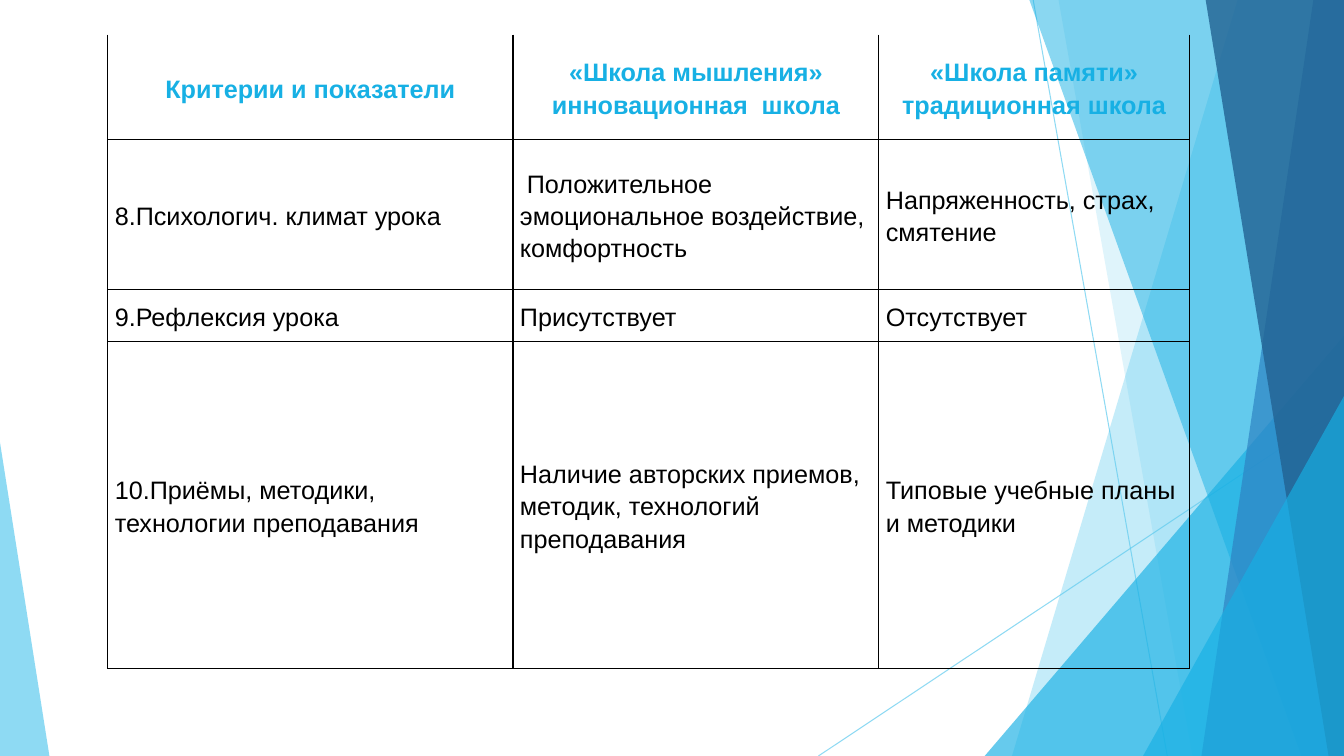
from lxml import etree
from pptx import Presentation
from pptx.dml.color import RGBColor
from pptx.enum.shapes import MSO_CONNECTOR, MSO_SHAPE
from pptx.enum.text import MSO_ANCHOR, PP_ALIGN
from pptx.oxml.ns import qn
from pptx.util import Pt

STRAIGHT = MSO_CONNECTOR.STRAIGHT
TRIANGLE = MSO_SHAPE.ISOSCELES_TRIANGLE
MIDDLE = MSO_ANCHOR.MIDDLE
LEFT, CENTER = PP_ALIGN.LEFT, PP_ALIGN.CENTER

BLACK = RGBColor(0x00, 0x00, 0x00)
SKY = RGBColor(0x5F, 0xCB, 0xEF)
CYAN = RGBColor(0x17, 0xB0, 0xE4)
BLUE = RGBColor(0x2E, 0x83, 0xC3)
NAVY = RGBColor(0x22, 0x62, 0x92)

WIDTH, HEIGHT = 960, 540
FONT = "Arial"

COLUMN_WIDTHS = [289.4, 261.4, 221.8]
ROW_HEIGHTS = [74.9, 107.3, 36.7, 234]
CRITERIA = [
    ["Критерии и показатели",
     "«Школа мышления»\nинновационная  школа",
     "«Школа памяти»\nтрадиционная школа"],
    ["8.Психологич. климат урока",
     " Положительное эмоциональное воздействие, комфортность",
     "Напряженность, страх, смятение"],
    ["9.Рефлексия урока", "Присутствует", "Отсутствует"],
    ["10.Приёмы, методики, технологии преподавания",
     "Наличие авторских приемов, методик, технологий  преподавания",
     "Типовые учебные планы и методики"],
]


def set_alpha(fill_owner, percent):
    """Make the solid fill inside a shape or line element translucent."""
    color = next(fill_owner.iter(qn("a:srgbClr")))
    etree.SubElement(color, qn("a:alpha"), val=str(percent * 1000))


def paint(shape, color, opacity):
    shape.shadow.inherit = False
    shape.fill.solid()
    shape.fill.fore_color.rgb = color
    set_alpha(shape.fill._xPr, opacity)
    shape.line.fill.background()


def add_ray(slide, x1, y1, x2, y2):
    ray = slide.shapes.add_connector(STRAIGHT, Pt(x1), Pt(y1), Pt(x2), Pt(y2))
    ray.line.color.rgb = SKY
    ray.line.width = Pt(0.75)
    properties = ray._element.spPr
    set_alpha(properties, 70)
    etree.SubElement(properties, qn("a:effectLst"))


def add_facet(slide, top_x, bottom_x, color, opacity):
    """Fill the area from a slanted edge to the right side of the slide."""
    top = -0.6
    builder = slide.shapes.build_freeform(Pt(top_x), Pt(top))
    corners = [(WIDTH, top), (WIDTH, HEIGHT), (bottom_x, HEIGHT)]
    builder.add_line_segments([(Pt(x), Pt(y)) for x, y in corners], close=True)
    paint(builder.convert_to_shape(), color, opacity)


def add_corner(slide, left, top, right, apex, color, opacity):
    """Add a triangle on the bottom edge; apex 0 is left, 1 is right."""
    corner = slide.shapes.add_shape(
        TRIANGLE, Pt(left), Pt(top), Pt(right - left), Pt(HEIGHT - top))
    corner.adjustments[0] = apex
    paint(corner, color, opacity)


def write_text(frame, text, size=18, color=BLACK, bold=False, align=LEFT):
    frame.word_wrap = True
    for index, line in enumerate(text.split("\n")):
        paragraph = frame.add_paragraph() if index else frame.paragraphs[0]
        paragraph.alignment = align
        paragraph.line_spacing = 1.15
        run = paragraph.add_run()
        run.text = line
        run.font.name = FONT
        run.font.size = Pt(size)
        run.font.bold = bold
        run.font.color.rgb = color


def set_borders(cell, hidden=()):
    properties = cell._tc.get_or_add_tcPr()
    for side in ("lnL", "lnR", "lnT", "lnB"):
        border = etree.SubElement(properties, qn(f"a:{side}"), w=str(Pt(1)))
        if side in hidden:
            etree.SubElement(border, qn("a:noFill"))
        else:
            fill = etree.SubElement(border, qn("a:solidFill"))
            etree.SubElement(fill, qn("a:srgbClr"), val=str(BLACK))


def add_criteria_table(slide):
    table = slide.shapes.add_table(
        len(ROW_HEIGHTS), len(COLUMN_WIDTHS), Pt(77), Pt(24.8),
        Pt(sum(COLUMN_WIDTHS)), Pt(sum(ROW_HEIGHTS))).table
    table.first_row = table.horz_banding = False
    for column, width in zip(table.columns, COLUMN_WIDTHS):
        column.width = Pt(width)
    for row_index, (row, height) in enumerate(zip(table.rows, ROW_HEIGHTS)):
        row.height = Pt(height)
        header = row_index == 0
        text_format = dict(color=CYAN, bold=True, align=CENTER) if header else {}
        for cell, text in zip(row.cells, CRITERIA[row_index]):
            cell.vertical_anchor = MIDDLE
            cell.margin_left = cell.margin_right = Pt(5)
            cell.margin_top = cell.margin_bottom = 0
            set_borders(cell, hidden=("lnT",) if header else ())
            cell.fill.background()
            write_text(cell.text_frame, text, **text_format)


def add_backdrop(slide):
    add_ray(slide, 738, 0, 833.8, HEIGHT)
    add_ray(slide, WIDTH, 290.2, 584.6, HEIGHT)
    add_facet(slide, 884.2, 722.9, SKY, 36)
    add_facet(slide, 756, 851.8, SKY, 20)
    add_corner(slide, 703.4, 239.8, WIDTH, 1, CYAN, 66)
    add_facet(slide, 735.1, 929.5, CYAN, 50)
    add_facet(slide, 938.2, 858.2, BLUE, 70)
    add_facet(slide, 861.1, 949, NAVY, 80)
    add_corner(slide, 816.5, 283, WIDTH, 1, CYAN, 66)
    add_corner(slide, 0, 316.1, 35.3, 0, SKY, 70)


def main():
    deck = Presentation()
    deck.slide_width, deck.slide_height = Pt(WIDTH), Pt(HEIGHT)
    slide = deck.slides.add_slide(deck.slide_layouts[6])
    add_backdrop(slide)
    add_criteria_table(slide)
    deck.save("out.pptx")


if __name__ == "__main__":
    main()
